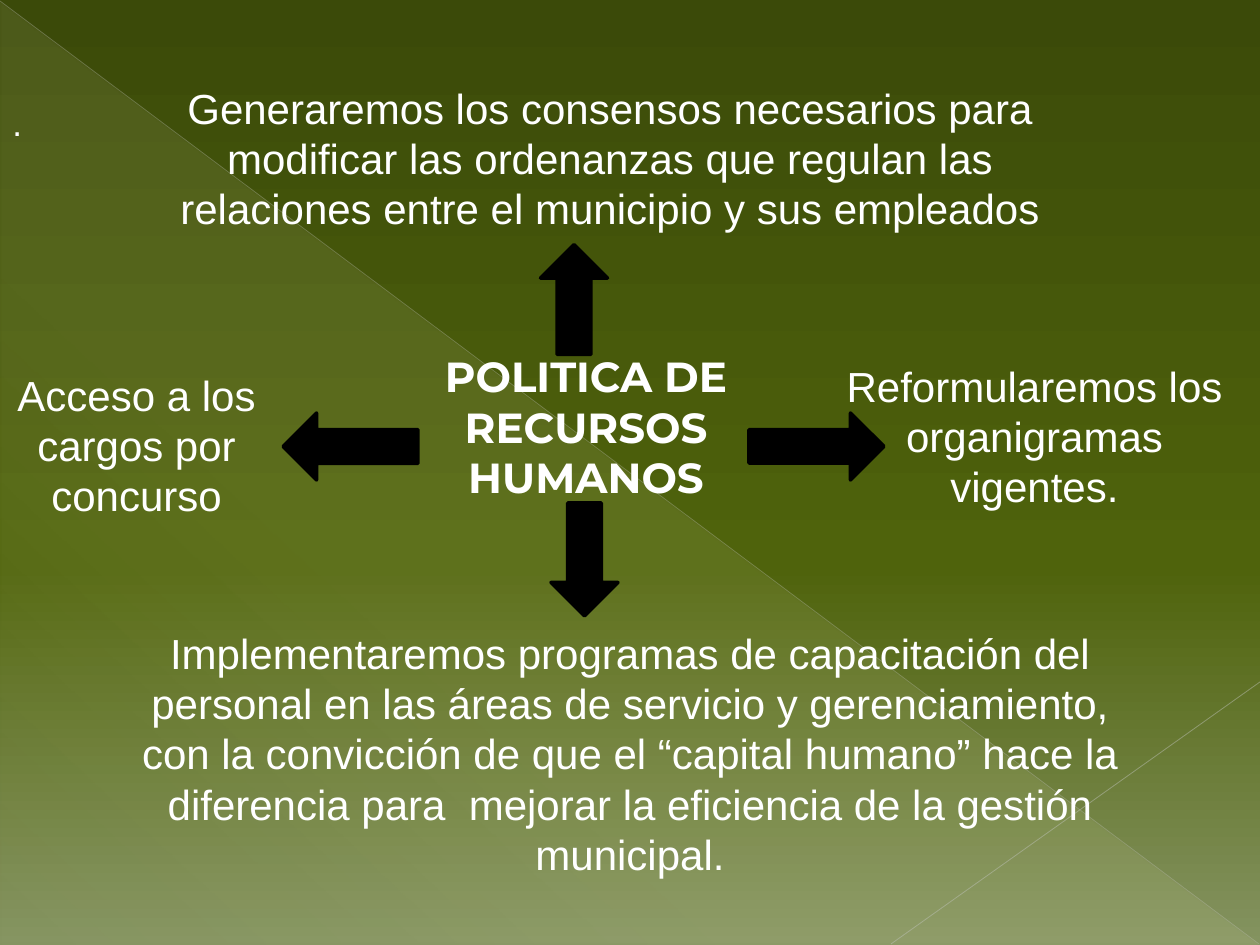
import pptx
import pptx.util
import pptx.dml.color
import pptx.enum.shapes
import pptx.enum.text
import pptx.oxml.ns
from dataclasses import dataclass
from lxml import etree

PX = 914400 // 126


@dataclass(frozen=True)
class Theme:
    text: str = "FFFFFF"
    arrow: str = "000000"
    body_font: str = "Arial"
    title_font: str = "Montserrat"
    size: int = 24
    small_size: int = 20
    leading: float = 1.2
    # Gradient stops: position, colour, opacity (all in percent)
    background: tuple = ((0, "3B4A09", 100), (60, "4F630C", 100), (100, "849360", 100))
    veil: tuple = ((0, "FEFAC9", 10), (70, "FEFAC9", 8), (100, "FEFAC9", 1))


THEME = Theme()
SHAPES = pptx.enum.shapes.MSO_SHAPE
ALIGN = pptx.enum.text.PP_ALIGN
ANCHOR = pptx.enum.text.MSO_ANCHOR


def px(*lengths):
    return [pptx.util.Emu(length * PX) for length in lengths]


def rgb(colour):
    return pptx.dml.color.RGBColor.from_string(colour)


def add_element(parent, tag, **attributes):
    element = etree.SubElement(parent, pptx.oxml.ns.qn(tag))
    for name, value in attributes.items():
        element.set(name, str(value))
    return element


def set_alpha(colour_element, percent):
    add_element(colour_element, "a:alpha", val=percent * 1000)


def set_gradient(fill, owner, stops, angle):
    """Give the fill inside the owner element any number of stops."""
    fill.gradient()
    gradient = owner.find(".//" + pptx.oxml.ns.qn("a:gradFill"))
    for child in list(gradient):
        gradient.remove(child)
    stop_list = add_element(gradient, "a:gsLst")
    for position, colour, opacity in stops:
        stop = add_element(stop_list, "a:gs", pos=position * 1000)
        set_alpha(add_element(stop, "a:srgbClr", val=colour), opacity)
    add_element(gradient, "a:lin", ang=angle * 60000, scaled=0)


def add_veil(slide, box):
    veil = slide.shapes.add_shape(SHAPES.RIGHT_TRIANGLE, *px(*box))
    veil.shadow.inherit = False
    veil.line.fill.background()
    set_gradient(veil.fill, veil._element.spPr, THEME.veil, 133)


def add_hairline(slide, ends, colour, width, opacity):
    line = slide.shapes.add_connector(
        pptx.enum.shapes.MSO_CONNECTOR.STRAIGHT, *px(*ends))
    line.line.color.rgb = rgb(colour)
    line.line.width = pptx.util.Pt(width)
    properties = line._element.spPr
    set_alpha(properties.find(".//" + pptx.oxml.ns.qn("a:srgbClr")), opacity)
    add_element(properties, "a:effectLst")


def write_text(shape, text, font, size, align, anchor, bold=False):
    frame = shape.text_frame
    frame.word_wrap = True
    frame.auto_size = pptx.enum.text.MSO_AUTO_SIZE.NONE
    frame.vertical_anchor = anchor
    paragraph = frame.paragraphs[0]
    paragraph.alignment = align
    paragraph.space_before = pptx.util.Pt(0)
    paragraph.line_spacing = pptx.util.Pt(size * THEME.leading)
    run = paragraph.add_run()
    run.text = text
    run.font.name = font
    run.font.size = pptx.util.Pt(size)
    run.font.bold = bold
    run.font.color.rgb = rgb(THEME.text)


def add_title(slide, box, text):
    title = slide.shapes.title
    title.left, title.top, title.width, title.height = px(*box)
    write_text(title, text, THEME.title_font, THEME.size, ALIGN.CENTER,
               ANCHOR.MIDDLE, bold=True)
    # Keep the title in front of the decoration
    slide.shapes._spTree.append(title._element)


def add_text(slide, box, text, size=THEME.size, align=ALIGN.CENTER, anchor=ANCHOR.TOP):
    shape = slide.shapes.add_textbox(*px(*box))
    write_text(shape, text, THEME.body_font, size, align, anchor)


def add_arrow(slide, centre_x, centre_y, length, rotation):
    thickness = 67
    arrow = slide.shapes.add_shape(
        SHAPES.RIGHT_ARROW,
        *px(centre_x - length // 2, centre_y - thickness // 2, length, thickness))
    arrow.rotation = rotation
    arrow.shadow.inherit = False
    arrow.fill.solid()
    arrow.fill.fore_color.rgb = rgb(THEME.arrow)
    arrow.line.color.rgb = rgb(THEME.arrow)
    arrow.line.width = pptx.util.Pt(2)


def main():
    presentation = pptx.Presentation()
    presentation.slide_width, presentation.slide_height = px(1260, 945)
    slide = presentation.slides.add_slide(presentation.slide_layouts[5])

    # Background and decoration
    set_gradient(slide.background.fill, slide._element, THEME.background, 90)
    add_veil(slide, (1, 2, 1258, 942))
    add_hairline(slide, (0, 1, 1259, 944), "BABDB3", 0.39, 35)
    add_hairline(slide, (1260, 682, 891, 944), "C1C4BC", 0.47, 45)

    # Central topic
    add_title(slide, (353, 344, 466, 165), "POLITICA DE RECURSOS HUMANOS")

    # Policies around the topic
    add_text(slide, (0, 95, 1260, 55), ".", THEME.small_size, ALIGN.LEFT, ANCHOR.MIDDLE)
    add_text(slide, (0, 363, 273, 165), "Acceso a los cargos por concurso")
    add_text(slide, (809, 354, 451, 165), "Reformularemos los organigramas vigentes.")
    add_text(slide, (154, 76, 912, 165),
             "Generaremos los consensos necesarios para modificar las ordenanzas "
             "que regulan las relaciones entre el municipio y sus empleados")
    add_text(slide, (124, 621, 1012, 267),
             "Implementaremos programas de capacitación del personal en las áreas de "
             "servicio y gerenciamiento, con la convicción de que el “capital humano” "
             "hace la diferencia para  mejorar la eficiencia de la gestión municipal.")

    # Arrows pointing right, left, down and up
    for arrow in ((816, 446, 135, 0), (350, 446, 135, 180),
                  (584, 559, 113, 90), (574, 299, 110, 270)):
        add_arrow(slide, *arrow)

    presentation.save("out.pptx")


if __name__ == "__main__":
    main()
